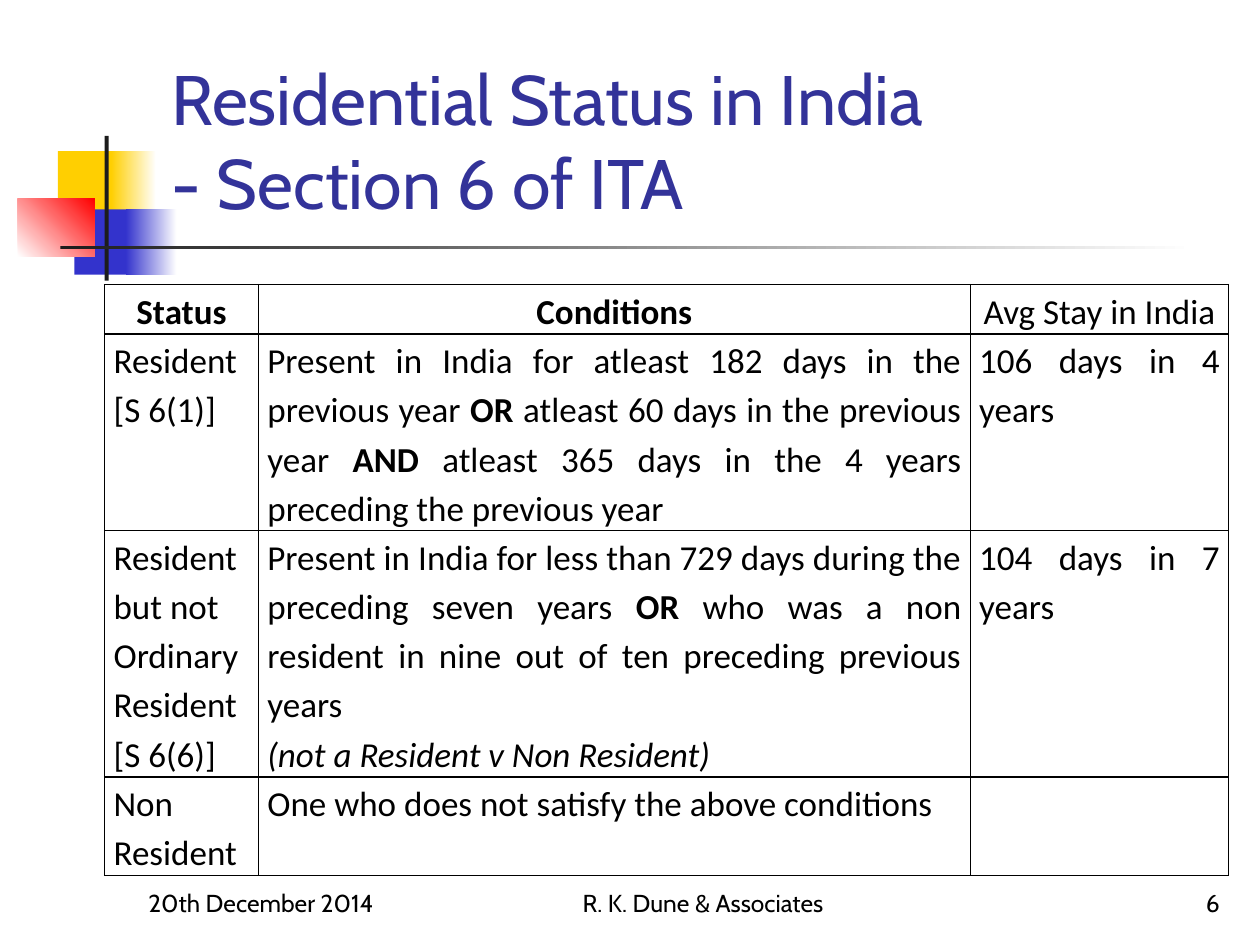
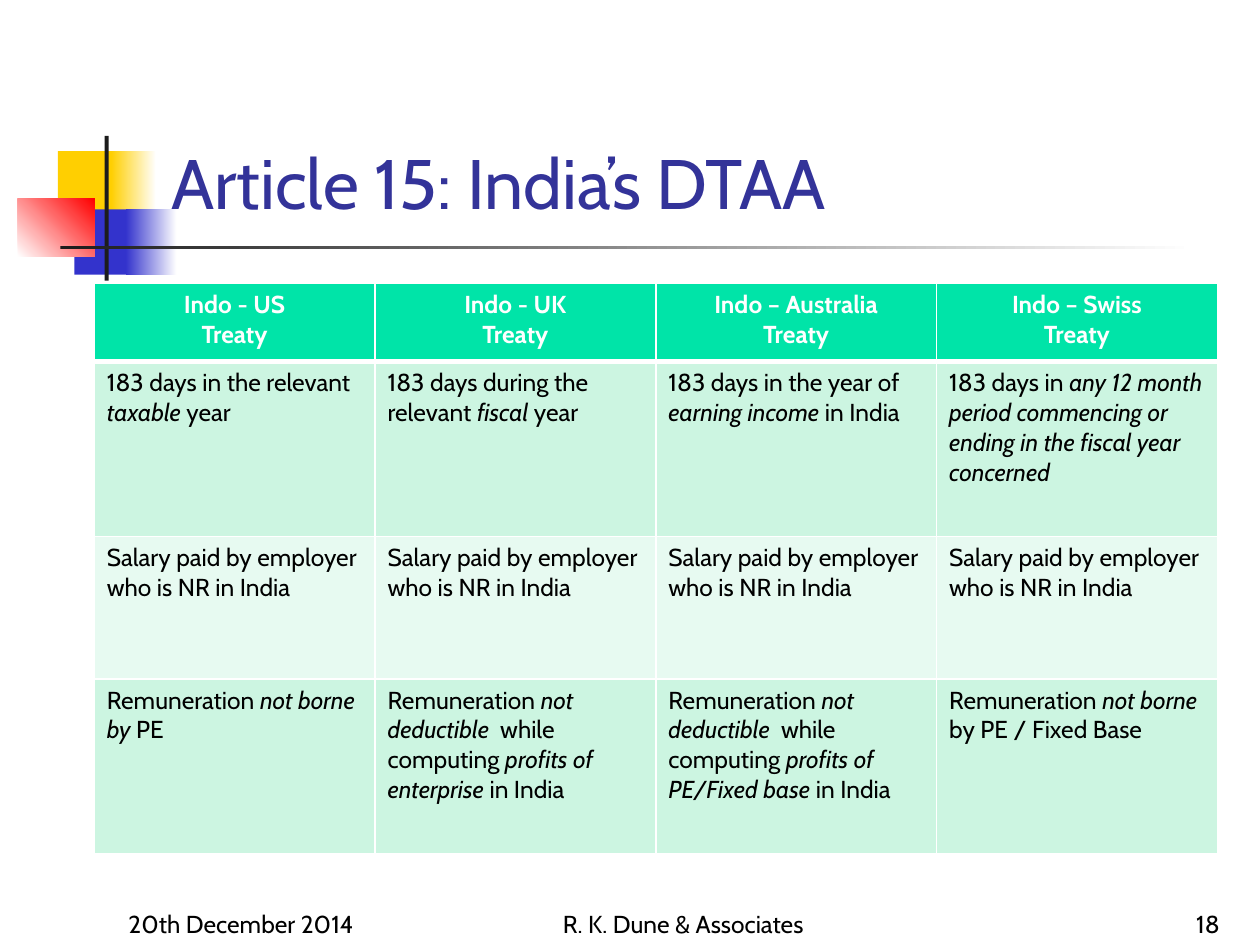
from dataclasses import dataclass
from typing import NamedTuple

from pptx import Presentation
from pptx import util as u
from pptx.dml.color import RGBColor
from pptx.enum import shapes, text
from pptx.oxml import parse_xml
from pptx.oxml.ns import nsdecls

LEFT, MID, RIGHT, JUST = (text.PP_ALIGN.LEFT, text.PP_ALIGN.CENTER,
                          text.PP_ALIGN.RIGHT, text.PP_ALIGN.JUSTIFY)


@dataclass(frozen=True)
class Theme:
    ink: str = "000000"
    paper: str = "FFFFFF"
    title: str = "333399"
    gold: str = "FFCF01"
    blue: str = "3333CC"
    red: str = "FF0000"
    dark: str = "1C1C1C"
    head: str = "00E4A8"
    mint: str = "CCF5E1"
    pale: str = "E7FAF1"
    face: str = "Cabin"
    grid_face: str = "Calibri"
    title_pt: int = 40
    grid_pt: int = 20
    small_pt: int = 14


T = Theme()


class Box(NamedTuple):
    """Left, top, width and height in centimetres."""
    x: float
    y: float
    w: float
    h: float

    def cm(self) -> list:
        return [u.Cm(v) for v in self]


class Block(NamedTuple):
    box: Box
    start: str
    end: str = ""
    angle: int = 0


class Type(NamedTuple):
    face: str
    size: int
    color: str
    bold: bool = False


class Foot(NamedTuple):
    left: float
    top: float
    page: str


class Look(NamedTuple):
    """How a table is set: head and body type, fills, lines, spacing."""
    head: Type
    body: Type
    fills: list
    line: str
    head_pt: int
    align: int
    format: dict
    spacing: float


# Shared motif: four blocks and two rules
MOTIF = [
    Block(Box(1.17, 3.05, 1.22, 1.32), T.gold),
    Block(Box(2.24, 3.05, 0.91, 1.32), T.gold, T.paper),
    Block(Box(1.5, 4.22, 1.17, 1.32), T.blue),
    Block(Box(2.54, 4.22, 1.02, 1.32), T.blue, T.paper),
    Block(Box(0.36, 4.01, 1.55, 1.17), T.paper, T.red, 45),
    Block(Box(2.11, 2.74, 0.08, 2.92), T.dark),
    Block(Box(1.22, 4.95, 22.86, 0.08), T.dark, T.paper),
]
TITLE = Box(3.2, 0.58, 21.64, 4.06)
DATE, FIRM = "20th December 2014", "R. K. Dune & Associates"
SMALL = Type(T.face, T.small_pt, T.ink)
GRID = Type(T.grid_face, T.grid_pt, T.ink)

PLAIN = Look(GRID._replace(bold=True), GRID, [None], T.ink, 1, JUST,
             dict(margin_left=u.Cm(0.18), margin_right=u.Cm(0.18),
                  margin_top=0, margin_bottom=0), 1.15)
BANDED = Look(SMALL._replace(color=T.paper, bold=True), SMALL,
              [T.head, T.mint, T.pale, T.mint], T.paper, 3, LEFT, {}, 1.0)

# Table text: *bold*, _italic_, one line per paragraph
STATUS = [
    ["Status", "Conditions", "*Avg Stay in India*"],
    ["Resident\n[S 6(1)]",
     "Present in India for atleast 182 days in the previous year *OR *atleast "
     "60 days in the previous year *AND *atleast 365 days in the 4 years "
     "preceding the previous year",
     "106 days in 4 years"],
    ["Resident but not\nOrdinary Resident\n[S 6(6)]",
     "Present in India for less than 729 days during the preceding seven "
     "years *OR *who was a non resident in nine out of ten preceding previous "
     "years\n_(not a Resident v Non Resident)_",
     "104 days in 7 years"],
    ["Non Resident", "One who does not satisfy the above conditions", ""],
]
TREATY = [
    [f"Indo {name}\nTreaty" for name in ("- US", "- UK", "– Australia", "– Swiss")],
    ["183 days in the relevant _taxable _year",
     "183 days during the relevant _fiscal _year",
     "183 days in the year of _earning income _in India",
     "183 days in _any 12 month period commencing or ending in the fiscal "
     "year concerned_"],
    ["Salary paid by employer who is NR in India"] * 4,
    ["Remuneration _not borne by _PE",
     *(f"Remuneration _not deductible  _while computing _profits of {base} _in India"
       for base in ("enterprise", "PE/Fixed base")),
     "Remuneration _not borne _by PE / Fixed Base"],
]


def apply(item, values: dict) -> None:
    for key, value in values.items():
        setattr(item, key, value)


def write(frame, words: str, kind: Type, align: int, spacing: float = 1.0) -> None:
    """Write marked text; an asterisk flips the bold of the type."""
    for num, line in enumerate(words.split("\n")):
        para = frame.add_paragraph() if num else frame.paragraphs[0]
        apply(para, dict(alignment=align, line_spacing=spacing))
        for b, chunk in enumerate(line.split("*")):
            for i, part in enumerate(chunk.split("_")):
                if part:
                    run = para.add_run()
                    run.text = part
                    apply(run.font, dict(name=kind.face, size=u.Pt(kind.size),
                                         bold=kind.bold != bool(b % 2),
                                         italic=bool(i % 2)))
                    run.font.color.rgb = RGBColor.from_string(kind.color)


def block(slide, part: Block) -> None:
    shape = slide.shapes.add_shape(shapes.MSO_SHAPE.RECTANGLE, *part.box.cm())
    shape.shadow.inherit = False
    shape.line.fill.background()
    if part.end:
        shape.fill.gradient()
        shape.fill.gradient_angle = part.angle
        for stop, color, place in zip(shape.fill.gradient_stops,
                                      (part.start, part.end), (0, 1)):
            stop.color.rgb = RGBColor.from_string(color)
            stop.position = place
    else:
        shape.fill.solid()
        shape.fill.fore_color.rgb = RGBColor.from_string(part.start)


def footer(slide, foot: Foot) -> None:
    for words, x, w, align in ((DATE, foot.left, 5.28, LEFT),
                               (FIRM, foot.left + 7.41, 8.05, MID),
                               (foot.page, 19.56, 5.28, RIGHT)):
        frame = slide.shapes.add_textbox(*Box(x, foot.top, w, 1.27).cm()).text_frame
        apply(frame, dict(word_wrap=True, vertical_anchor=text.MSO_ANCHOR.BOTTOM))
        write(frame, words, SMALL, align)


def base(deck, title: str, foot: Foot):
    """Add a slide with its motif, title and footer."""
    slide = deck.slides.add_slide(deck.slide_layouts[5])
    for part in MOTIF:
        block(slide, part)
    head = slide.shapes.title
    apply(head, dict(zip(("left", "top", "width", "height"), TITLE.cm())))
    frame = head.text_frame
    apply(frame, dict(word_wrap=True, auto_size=text.MSO_AUTO_SIZE.NONE,
                      vertical_anchor=text.MSO_ANCHOR.BOTTOM))
    para = frame.paragraphs[0]
    para.text = title
    para.alignment = LEFT
    for run in para.runs:
        apply(run.font, dict(name=T.face, size=u.Pt(T.title_pt)))
        run.font.color.rgb = RGBColor.from_string(T.title)
    footer(slide, foot)
    return slide


def border(cell, color: str, top: int, low: int) -> None:
    props = cell._tc.get_or_add_tcPr()
    for side, width in (("L", 1), ("R", 1), ("T", top), ("B", low)):
        props.append(parse_xml(
            f'<a:ln{side} {nsdecls("a")} w="{u.Pt(width)}"><a:solidFill>'
            f'<a:srgbClr val="{color}"/></a:solidFill></a:ln{side}>'))


def table(slide, x: float, y: float, cols: list, rows: list,
          cells: list, look: Look) -> None:
    box = Box(x, y, sum(cols), sum(rows))
    grid = slide.shapes.add_table(len(rows), len(cols), *box.cm()).table
    apply(grid, dict(first_row=False, horz_banding=False))
    for col, w in zip(grid.columns, cols):
        col.width = u.Cm(w)
    for r, (row, h) in enumerate(zip(grid.rows, rows)):
        row.height = u.Cm(h)
        fill = look.fills[r % len(look.fills)]
        kind, align = (look.body, look.align) if r else (look.head, MID)
        for cell, words in zip(row.cells, cells[r]):
            apply(cell, look.format)
            border(cell, look.line, look.head_pt if r == 1 else 1,
                   1 if r else look.head_pt)
            if fill:
                cell.fill.solid()
                cell.fill.fore_color.rgb = RGBColor.from_string(fill)
            else:
                cell.fill.background()
            write(cell.text_frame, words, kind, align, look.spacing)


def main() -> None:
    deck = Presentation()
    apply(deck, dict(slide_width=u.Cm(25.4), slide_height=u.Cm(19.05)))

    # Residential status
    slide = base(deck, "Residential Status in India\v- Section 6 of ITA",
                 Foot(2.74, 17.35, "6"))
    table(slide, 2.11, 5.74, [3.1, 14.35, 5.21], [0.99, 3.96, 4.97, 1.99],
          STATUS, PLAIN)

    # Treaty comparison
    slide = base(deck, "Article 15: India’s DTAA", Foot(2.34, 17.78, "18"))
    table(slide, 1.9, 5.72, [5.66] * 4, [1.57, 3.53, 2.87, 3.53],
          TREATY, BANDED)

    deck.save("out.pptx")


if __name__ == "__main__":
    main()
